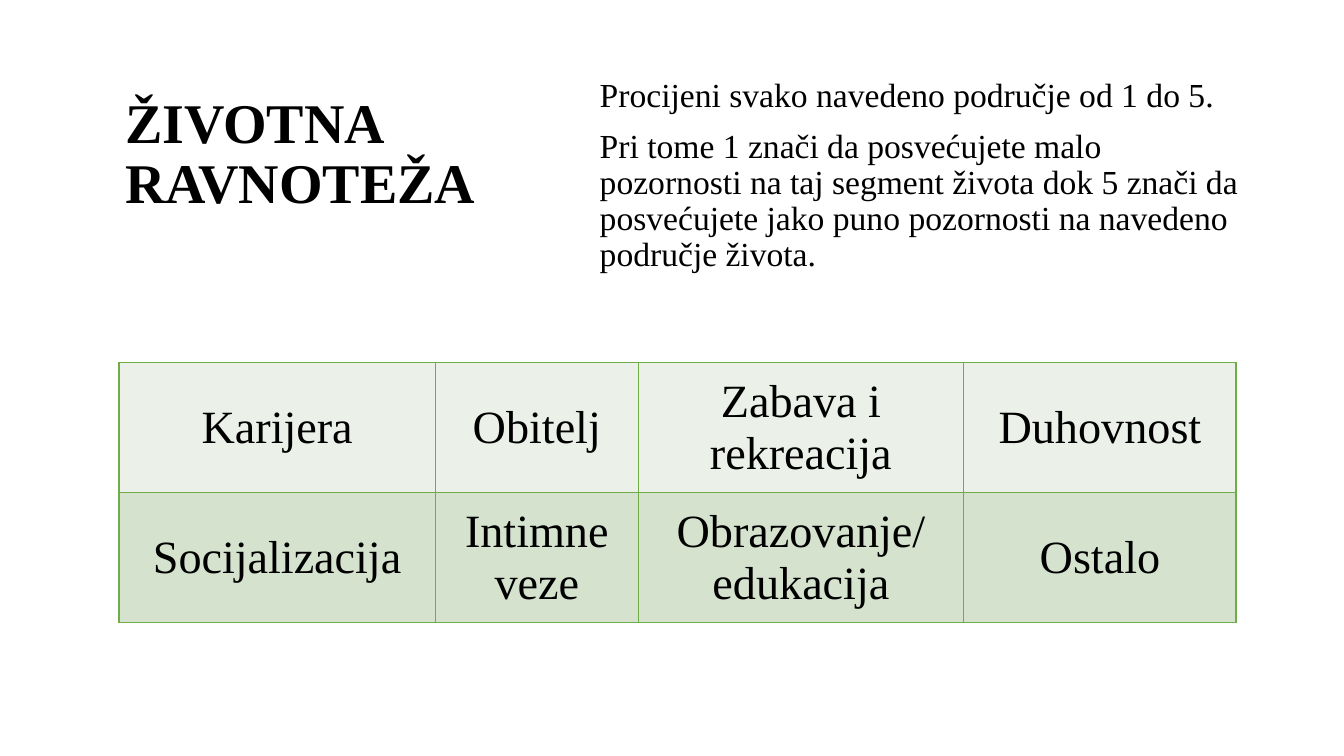
from lxml import etree
from pptx import Presentation
from pptx import util as u
from pptx.dml.color import RGBColor
from pptx.enum import text
from pptx.oxml import ns

FONT, INK, BORDER = "Times New Roman", "000000", "70AD47"
TITLE = "ŽIVOTNA RAVNOTEŽA"
INSTRUCTIONS = [
    "Procijeni svako navedeno područje od 1 do 5.",
    "Pri tome 1 znači da posvećujete malo pozornosti na taj segment života "
    "dok 5 znači da posvećujete jako puno pozornosti na navedeno područje života.",
]
# Each cell is a list of paragraphs
LIFE_AREAS = [
    [["Karijera"], ["Obitelj"], ["Zabava i rekreacija"], ["Duhovnost"]],
    [["Socijalizacija"], ["Intimne veze"], ["Obrazovanje/", "edukacija"], ["Ostalo"]],
]
ROW_FILLS = ["EBF1E8", "D4E2CE"]
COLUMN_WIDTHS = [3.14, 2.01, 3.23, 2.7]
ROW_HEIGHT = 1.29
TABLE_LEFT, TABLE_TOP = 1.18, 3.6


def color(value):
    return RGBColor.from_string(value)


def place(shape, left, top, width, height):
    shape.left, shape.top = u.Inches(left), u.Inches(top)
    shape.width, shape.height = u.Inches(width), u.Inches(height)


def write(frame, lines, size, bold=False, align=None, spacing=None, gap=0):
    frame.word_wrap = True
    for index, line in enumerate(lines):
        paragraph = frame.paragraphs[0] if index == 0 else frame.add_paragraph()
        paragraph.alignment = align
        paragraph.line_spacing = spacing
        paragraph.space_before = u.Pt(gap if index else 0)
        run = paragraph.add_run()
        run.text = line
        run.font.name, run.font.size, run.font.bold = FONT, u.Pt(size), bold
        run.font.color.rgb = color(INK)


def add_borders(cell):
    properties = cell._tc.get_or_add_tcPr()
    for side in ("lnL", "lnR", "lnT", "lnB"):
        line = etree.SubElement(properties, ns.qn(f"a:{side}"), w=str(u.Pt(1)))
        fill = etree.SubElement(line, ns.qn("a:solidFill"))
        etree.SubElement(fill, ns.qn("a:srgbClr"), val=BORDER)


presentation = Presentation()
presentation.slide_width, presentation.slide_height = u.Inches(13.33), u.Inches(7.5)
slide = presentation.slides.add_slide(presentation.slide_layouts[5])

# Title
title = slide.shapes.title
place(title, 1.14, 0.64, 3.89, 1.8)
write(title.text_frame, [TITLE], 40, bold=True, align=text.PP_ALIGN.LEFT, spacing=0.9)

# Instructions
instructions = slide.shapes.add_textbox(0, 0, 0, 0)
place(instructions, 5.85, 0.64, 6.56, 2.22)
write(instructions.text_frame, INSTRUCTIONS, 24, spacing=0.9, gap=10)

for shape in (title, instructions):
    shape.text_frame.auto_size = text.MSO_AUTO_SIZE.NONE
    shape.text_frame.vertical_anchor = text.MSO_ANCHOR.MIDDLE

# Table of life areas
table = slide.shapes.add_table(
    len(LIFE_AREAS), len(COLUMN_WIDTHS), u.Inches(TABLE_LEFT), u.Inches(TABLE_TOP),
    u.Inches(sum(COLUMN_WIDTHS)), u.Inches(ROW_HEIGHT * len(LIFE_AREAS))).table
table.first_row = table.horz_banding = False
for column, width in zip(table.columns, COLUMN_WIDTHS):
    column.width = u.Inches(width)
for row, areas, row_fill in zip(table.rows, LIFE_AREAS, ROW_FILLS):
    row.height = u.Inches(ROW_HEIGHT)
    for cell, lines in zip(row.cells, areas):
        add_borders(cell)
        cell.fill.solid()
        cell.fill.fore_color.rgb = color(row_fill)
        cell.vertical_anchor = text.MSO_ANCHOR.MIDDLE
        cell.margin_left = cell.margin_right = u.Inches(0.14)
        cell.margin_top = cell.margin_bottom = u.Inches(0.07)
        write(cell.text_frame, lines, 33, align=text.PP_ALIGN.CENTER)

presentation.save("out.pptx")
